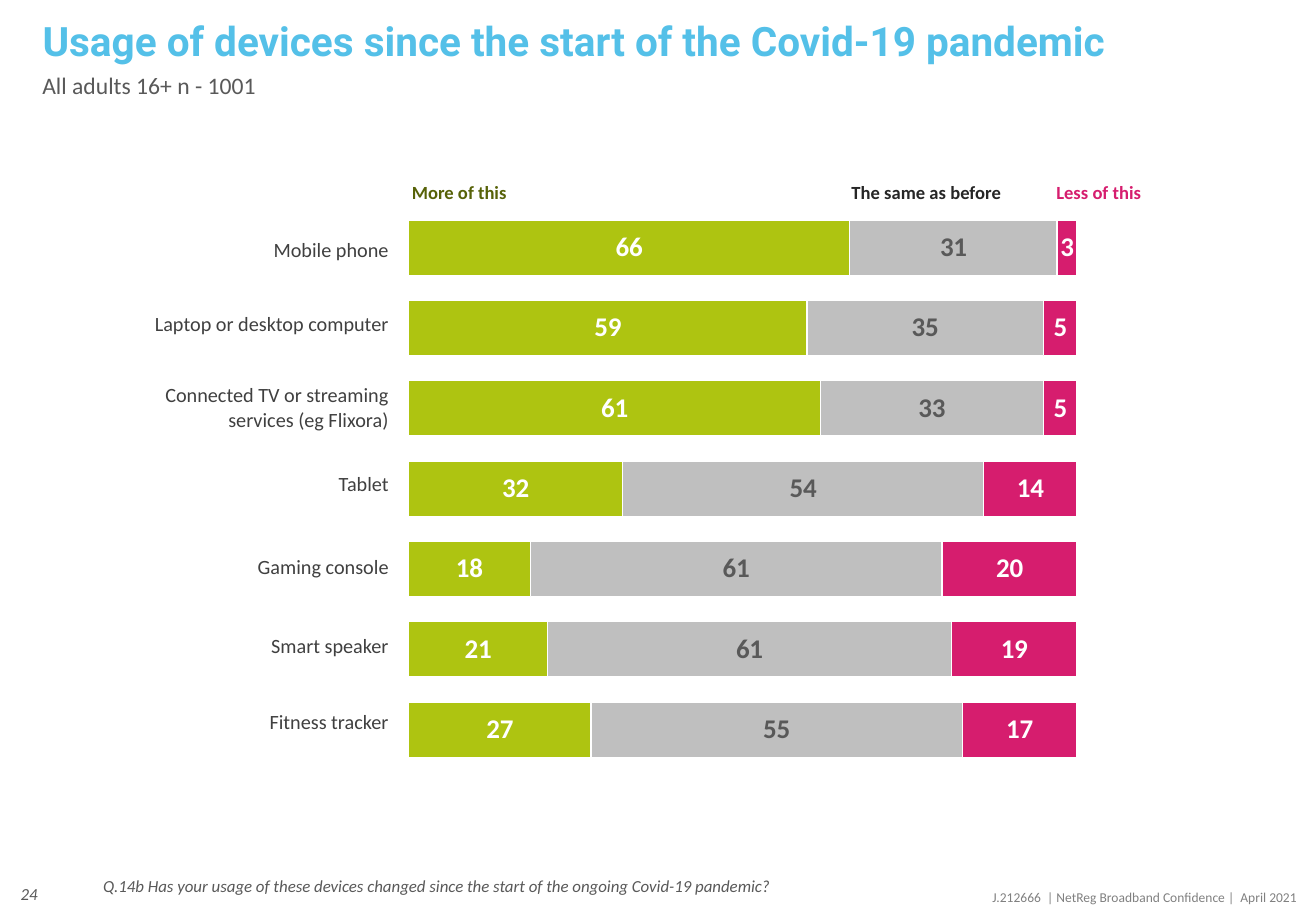
"""Build the slide on device usage since the start of the Covid-19 pandemic."""
from dataclasses import dataclass

from pptx import Presentation
from pptx.chart.data import CategoryChartData
from pptx.dml.color import RGBColor
from pptx.enum.chart import XL_CHART_TYPE as ChartType, XL_LABEL_POSITION as LabelPosition
from pptx.enum.text import MSO_ANCHOR as Anchor, MSO_AUTO_SIZE as AutoSize, PP_ALIGN as Align
from pptx.oxml import parse_xml
from pptx.oxml.ns import nsdecls, qn
from pptx.util import Pt

WHITE, GREY, PINK = "FFFFFF", "595959", "D61D6E"
NO_TABLE_STYLE = "{2D5ABB26-0587-4C30-8999-92F81FD0307C}"
PLOT_AREA = {"x": 0.083, "y": 0.186, "w": 0.561, "h": 0.812}


@dataclass
class TextStyle:
    size: float
    color: str
    bold: bool = False
    italic: bool = False
    name: str = "Calibri"
    align: Align = Align.LEFT
    anchor: Anchor = Anchor.TOP
    line_spacing: float = 1.0


@dataclass
class Note:
    text: str
    box: tuple[float, float, float, float]
    style: TextStyle


@dataclass
class Answer:
    name: str
    values: tuple[int, ...]
    fill: str
    label_color: str


@dataclass
class Grid:
    left: float
    top: float
    columns: tuple[float, ...]
    rows: tuple[float, ...]
    texts: tuple[str, ...]
    styles: tuple[TextStyle, ...]
    border: str | None = None


TITLE = Note("Usage of devices since the start of the Covid-19 pandemic", (18, 9.4, 684, 29.5),
             TextStyle(24, "54C0E8", bold=True, name="Roboto", line_spacing=0.9))
NOTES = (
    Note("All adults 16+ n - 1001", (18, 40.3, 437, 25.2), TextStyle(14, GREY, line_spacing=0.9)),
    Note("Q.14b Has your usage of these devices changed since the start of the ongoing "
         "Covid-19 pandemic?", (54, 517, 439.2, 22.3),
         TextStyle(10, GREY, italic=True, line_spacing=0.9)),
    Note("24", (-4.3, 515.5, 33.8, 28.8),
         TextStyle(10, GREY, italic=True, align=Align.RIGHT, anchor=Anchor.MIDDLE)),
    Note("J.212666  | NetReg Broadband Confidence |  April 2021", (571.7, 523.4, 204.5, 17.3),
         TextStyle(8, "808080", align=Align.RIGHT)),
)
ANSWERS = (
    Answer("Series 1", (66, 59, 61, 32, 18, 21, 27), "AEC411", WHITE),
    Answer("Series 2", (31, 35, 33, 54, 61, 61, 55), "BFBFBF", GREY),
    Answer("Series 3", (3, 5, 5, 14, 20, 19, 17), PINK, WHITE),
)
DEVICES = Grid(
    86.4, 140.4, (144.7,), (43.9, 42.5, 52.6, 49, 46.8, 45.4, 23),
    ("Mobile phone", "Laptop or desktop computer",
     "Connected TV or streaming services (eg Flixora)", "Tablet", "Gaming console",
     "Smart speaker", "Fitness tracker"),
    (TextStyle(12, "404040", align=Align.RIGHT),) * 7, WHITE)
LEGEND = Grid(
    243.4, 89.3, (260.6, 118.8, 56.9), (31.7,),
    ("More of this", "The same as before", "Less of this"),
    (TextStyle(11, "576208", bold=True, anchor=Anchor.BOTTOM),
     TextStyle(11, "262626", bold=True, anchor=Anchor.BOTTOM),
     TextStyle(11, PINK, bold=True, align=Align.CENTER, anchor=Anchor.BOTTOM)))


def rgb(color: str) -> RGBColor:
    return RGBColor.from_string(color)


def write_text(frame, text: str, style: TextStyle) -> None:
    frame.text = text
    paragraph = frame.paragraphs[0]
    paragraph.alignment = style.align
    paragraph.line_spacing = style.line_spacing
    font = paragraph.font
    font.name, font.size = style.name, Pt(style.size)
    font.bold, font.italic = style.bold, style.italic
    font.color.rgb = rgb(style.color)


def place_note(shape, note: Note) -> None:
    shape.left, shape.top, shape.width, shape.height = map(Pt, note.box)
    frame = shape.text_frame
    frame.word_wrap = True
    frame.auto_size = AutoSize.NONE
    frame.vertical_anchor = note.style.anchor
    write_text(frame, note.text, note.style)


def set_borders(cell, color: str | None) -> None:
    fill = f'<a:solidFill><a:srgbClr val="{color}"/></a:solidFill>' if color else "<a:noFill/>"
    properties = cell._tc.get_or_add_tcPr()
    for side in "LRTB":
        properties.append(parse_xml(
            f'<a:ln{side} {nsdecls("a")} w="{Pt(1)}">{fill}</a:ln{side}>'))


def add_grid(slide, grid: Grid) -> None:
    shape = slide.shapes.add_table(
        len(grid.rows), len(grid.columns), Pt(grid.left), Pt(grid.top),
        Pt(sum(grid.columns)), Pt(sum(grid.rows)))
    table = shape.table
    table.first_row = table.horz_banding = False
    table._tbl.tblPr.find(qn("a:tableStyleId")).text = NO_TABLE_STYLE
    for column, width in zip(table.columns, grid.columns):
        column.width = Pt(width)
    for row, height in zip(table.rows, grid.rows):
        row.height = Pt(height)
    for cell, text, style in zip(table.iter_cells(), grid.texts, grid.styles):
        cell.margin_left = cell.margin_right = cell.margin_top = Pt(0.7)
        cell.margin_bottom = Pt(0)
        cell.vertical_anchor = style.anchor
        set_borders(cell, grid.border)
        cell.fill.background()
        write_text(cell.text_frame, text, style)


def set_plot_area(chart) -> None:
    plot_area = chart._chartSpace.chart.plotArea
    for layout in plot_area.findall(qn("c:layout")):
        plot_area.remove(layout)
    modes = "".join(f'<c:{axis}Mode val="edge"/>' for axis in "xy")
    sizes = "".join(f'<c:{key} val="{value}"/>' for key, value in PLOT_AREA.items())
    plot_area.insert(0, parse_xml(
        f'<c:layout {nsdecls("c")}><c:manualLayout><c:layoutTarget val="inner"/>'
        f"{modes}{sizes}</c:manualLayout></c:layout>"))


def add_usage_chart(slide) -> None:
    data = CategoryChartData()
    data.categories = [str(number + 1) for number in range(len(DEVICES.texts))]
    for answer in ANSWERS:
        data.add_series(answer.name, answer.values)
    chart = slide.shapes.add_chart(
        ChartType.BAR_STACKED_100, Pt(183.6), Pt(46.8), Pt(706.3), Pt(410.4), data).chart
    chart.has_title = chart.has_legend = False
    chart.font.name, chart.font.size = "Calibri", Pt(10)
    chart.font.color.rgb = rgb("000000")
    chart.category_axis.reverse_order = True
    chart.value_axis.has_major_gridlines = False
    chart.category_axis.visible = chart.value_axis.visible = False
    set_plot_area(chart)
    plot = chart.plots[0]
    plot.gap_width, plot.overlap, plot.vary_by_categories = 45, 100, False
    for series, answer in zip(plot.series, ANSWERS):
        series.format.fill.solid()
        series.format.fill.fore_color.rgb = rgb(answer.fill)
        series.format.line.color.rgb = rgb(WHITE)
        series.format.line.width = Pt(0.75)
        labels = series.data_labels
        labels.show_value = True
        labels.position = LabelPosition.CENTER
        labels.font.name, labels.font.size, labels.font.bold = "Calibri", Pt(16), True
        labels.font.color.rgb = rgb(answer.label_color)


def main() -> None:
    presentation = Presentation()
    presentation.slide_width, presentation.slide_height = Pt(780), Pt(540)
    slide = presentation.slides.add_slide(presentation.slide_layouts[5])
    place_note(slide.shapes.title, TITLE)
    for note in NOTES:
        place_note(slide.shapes.add_textbox(*map(Pt, note.box)), note)
    add_usage_chart(slide)
    add_grid(slide, DEVICES)
    add_grid(slide, LEGEND)
    presentation.save("out.pptx")


if __name__ == "__main__":
    main()
